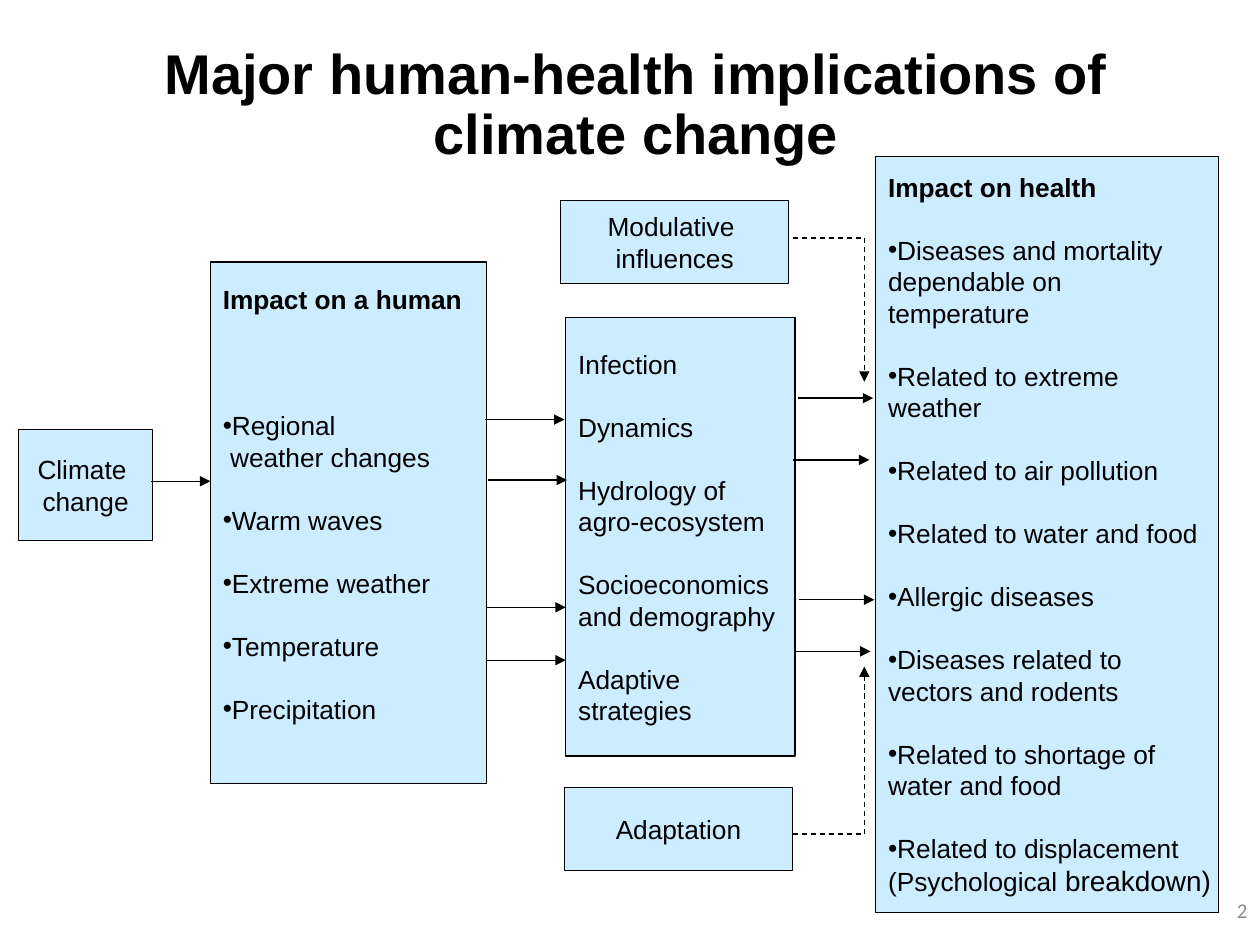
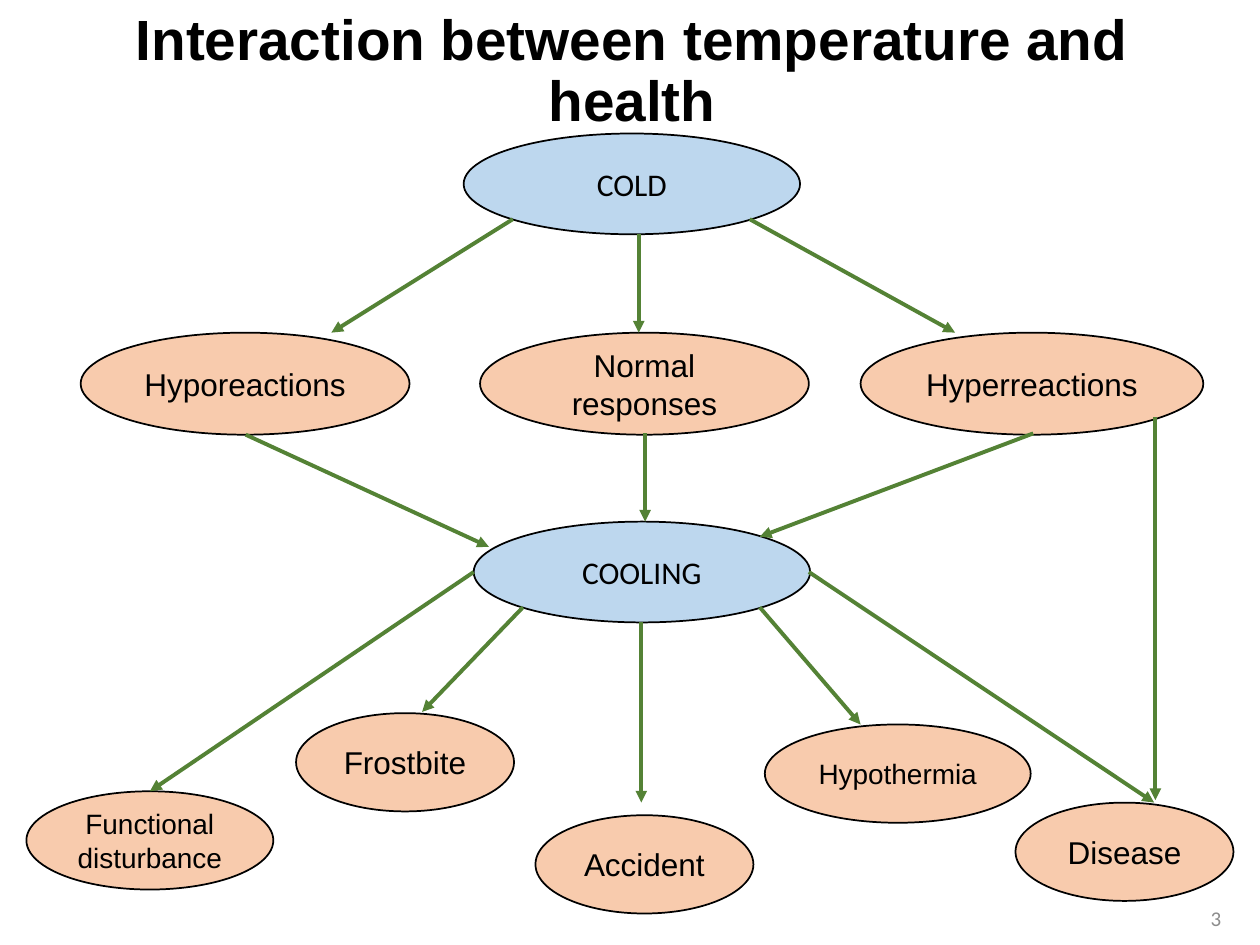
"""Build two slides on climate change, temperature and human health."""
from lxml.etree import SubElement
from pptx import Presentation
from pptx.dml.color import RGBColor
from pptx.enum.dml import MSO_LINE_DASH_STYLE as DASH
from pptx.enum.shapes import MSO_CONNECTOR as CONNECTOR, MSO_SHAPE as SHAPE
from pptx.enum.text import MSO_ANCHOR as ANCHOR, PP_ALIGN as ALIGN
from pptx.oxml.ns import qn
from pptx.util import Pt

PX = 9144
BLACK = RGBColor(0x00, 0x00, 0x00)
GREY = RGBColor(0x8C, 0x8C, 0x8C)
ICE = RGBColor(0xCC, 0xEC, 0xFF)
BLUE = RGBColor(0xBD, 0xD7, 0xEE)
PEACH = RGBColor(0xF8, 0xCB, 0xAD)
GREEN = RGBColor(0x54, 0x82, 0x35)


class Page:
    sans = "Arial"
    plain = "Calibri"
    list_size = 15
    list_gap = 18

    def __init__(self, deck):
        self.slide = deck.slides.add_slide(deck.slide_layouts[6])

    def span(self, para, text, size, font=sans, color=BLACK, bold=False):
        span = para.add_run()
        span.text = text
        span.font.name = font
        span.font.size = Pt(size)
        span.font.bold = bold
        span.font.color.rgb = color

    def textbox(self, place, align):
        frame = self.slide.shapes.add_textbox(*[n * PX for n in place]).text_frame
        frame.word_wrap = True
        frame.vertical_anchor = ANCHOR.MIDDLE
        para = frame.paragraphs[0]
        para.alignment = align
        return para

    def title(self, text, place, size):
        para = self.textbox(place, ALIGN.CENTER)
        para.line_spacing = 0.9
        self.span(para, text, size, bold=True)

    def number(self, text, place):
        self.span(self.textbox(place, ALIGN.RIGHT), text, 12, self.plain, GREY)

    def outline(self, kind, place, fill, width):
        shape = self.slide.shapes.add_shape(kind, *[n * PX for n in place])
        shape.shadow.inherit = False
        shape.fill.solid()
        shape.fill.fore_color.rgb = fill
        shape.line.color.rgb = BLACK
        shape.line.width = Pt(width)
        frame = shape.text_frame
        frame.vertical_anchor = ANCHOR.MIDDLE
        return frame

    def box(self, place):
        frame = self.outline(SHAPE.RECTANGLE, place, ICE, 0.75)
        frame.word_wrap = False
        return frame

    def line(self, frame, text, align=ALIGN.LEFT, bold=False):
        para = frame.paragraphs[0]
        if para.runs:
            para = frame.add_paragraph()
        para.alignment = align
        self.span(para, text, self.list_size, bold=bold)
        return para

    def label(self, place, *lines):
        frame = self.box(place)
        for text in lines:
            self.line(frame, text, ALIGN.CENTER)

    def listing(self, place, items, heading=None, heading_gap=list_gap):
        frame = self.box(place)
        if heading:
            self.line(frame, heading, bold=True)
        for index, item in enumerate(items):
            for row, text in enumerate(item.split("\n")):
                para = self.line(frame, text)
                if row == 0:
                    if index:
                        para.space_before = Pt(self.list_gap)
                    elif heading:
                        para.space_before = Pt(heading_gap)
                    if heading:
                        self.bullet(para)
        return frame

    def bullet(self, para):
        props = para._p.get_or_add_pPr()
        props.set("marL", "0")
        props.set("indent", "0")
        SubElement(props, qn("a:buFont"), typeface=self.sans)
        SubElement(props, qn("a:buChar"), char="•")

    def oval(self, text, place, fill=PEACH, size=18, font=sans):
        frame = self.outline(SHAPE.OVAL, place, fill, 1)
        frame.word_wrap = True
        para = frame.paragraphs[0]
        para.alignment = ALIGN.CENTER
        self.span(para, text, size, font)

    def arrow(self, ends, color=BLACK, width=0.75, dashed=False, head=True):
        link = self.slide.shapes.add_connector(
            CONNECTOR.STRAIGHT, *[n * PX for n in ends])
        link.line.color.rgb = color
        link.line.width = Pt(width)
        if dashed:
            link.line.dash_style = DASH.DASH
        props = link._element.spPr
        if head:
            SubElement(props.find(qn("a:ln")), qn("a:tailEnd"), type="triangle")
        SubElement(props, qn("a:effectLst"))


def build_implications(deck):
    page = Page(deck)
    page.title("Major human-health implications of climate change",
               (74, 31, 862, 107), 32)
    page.number("2", (891, 695, 109, 55))
    page.label((15, 341, 106, 88), "Climate ", "change")
    human = page.listing(
        (167, 208, 219, 414),
        ["Regional\n weather changes", "Warm waves", "Extreme weather",
         "Temperature", "Precipitation"],
        "Impact on a human", 3 * page.list_gap)
    human.vertical_anchor = ANCHOR.TOP
    human.margin_top = 17 * PX
    page.listing(
        (449, 252, 182, 348),
        ["Infection", "Dynamics", "Hydrology of\nagro-ecosystem",
         "Socioeconomics\nand demography", "Adaptive\nstrategies"])
    health = page.listing(
        (695, 124, 272, 600),
        ["Diseases and mortality\ndependable on\ntemperature",
         "Related to extreme\nweather", "Related to air pollution",
         "Related to water and food", "Allergic diseases",
         "Diseases related to\nvectors and rodents",
         "Related to shortage of\nwater and food",
         "Related to displacement\n(Psychological"],
        "Impact on health")
    page.span(health.paragraphs[-1], " breakdown)", 16)
    page.label((445, 159, 181, 66), "Modulative ", "influences")
    page.label((448, 625, 181, 66), "Adaptation")

    for left, y, right in [
            (120, 382, 167),
            (385, 333, 448), (387, 381, 450), (386, 482, 449), (386, 524, 449),
            (633, 316, 693), (629, 365, 690), (634, 476, 694), (631, 517, 691)]:
        page.arrow((left, y, right, y))
    for start, end in [(189, 303), (662, 529)]:
        page.arrow((629, start, 686, start), dashed=True, head=False)
        page.arrow((686, start, 686, end), dashed=True)


def build_interaction(deck):
    page = Page(deck)
    page.title("Interaction between temperature and health",
               (27, 22, 949, 71), 32.4)
    for text, left, top in [("COLD", 368, 106), ("COOLING", 376, 414)]:
        page.oval(text, (left, top, 267, 80), BLUE, font=page.plain)
    for text, left, width in [("Hyporeactions", 64, 261),
                              ("Normal responses", 381, 261),
                              ("Hyperreactions", 683, 272)]:
        page.oval(text, (left, 264, width, 81))
    for text, left, top, width, size in [
            ("Functional disturbance", 21, 628, 196, 16),
            ("Frostbite", 235, 566, 173, 18),
            ("Accident", 425, 647, 173, 18),
            ("Hypothermia", 607, 575, 211, 16),
            ("Disease", 806, 637, 173, 18)]:
        page.oval(text, (left, top, width, 78), size=size)

    from_cold = [(507, 186, 507, 264), (407, 174, 263, 264), (595, 174, 758, 264)]
    to_cooling = [(512, 344, 512, 414), (195, 345, 388, 434), (820, 344, 603, 426)]
    from_cooling = [(509, 494, 509, 637), (376, 454, 119, 628),
                    (415, 482, 335, 565), (603, 482, 683, 575),
                    (642, 454, 916, 637)]
    to_disease = [(917, 331, 917, 635)]
    for ends in from_cold + to_cooling + from_cooling + to_disease:
        page.arrow(ends, GREEN, 2.25)
    page.number("3", (754, 709, 225, 40))


def main():
    deck = Presentation()
    deck.slide_width = 1000 * PX
    deck.slide_height = 750 * PX
    build_implications(deck)
    build_interaction(deck)
    deck.save("out.pptx")


if __name__ == "__main__":
    main()
